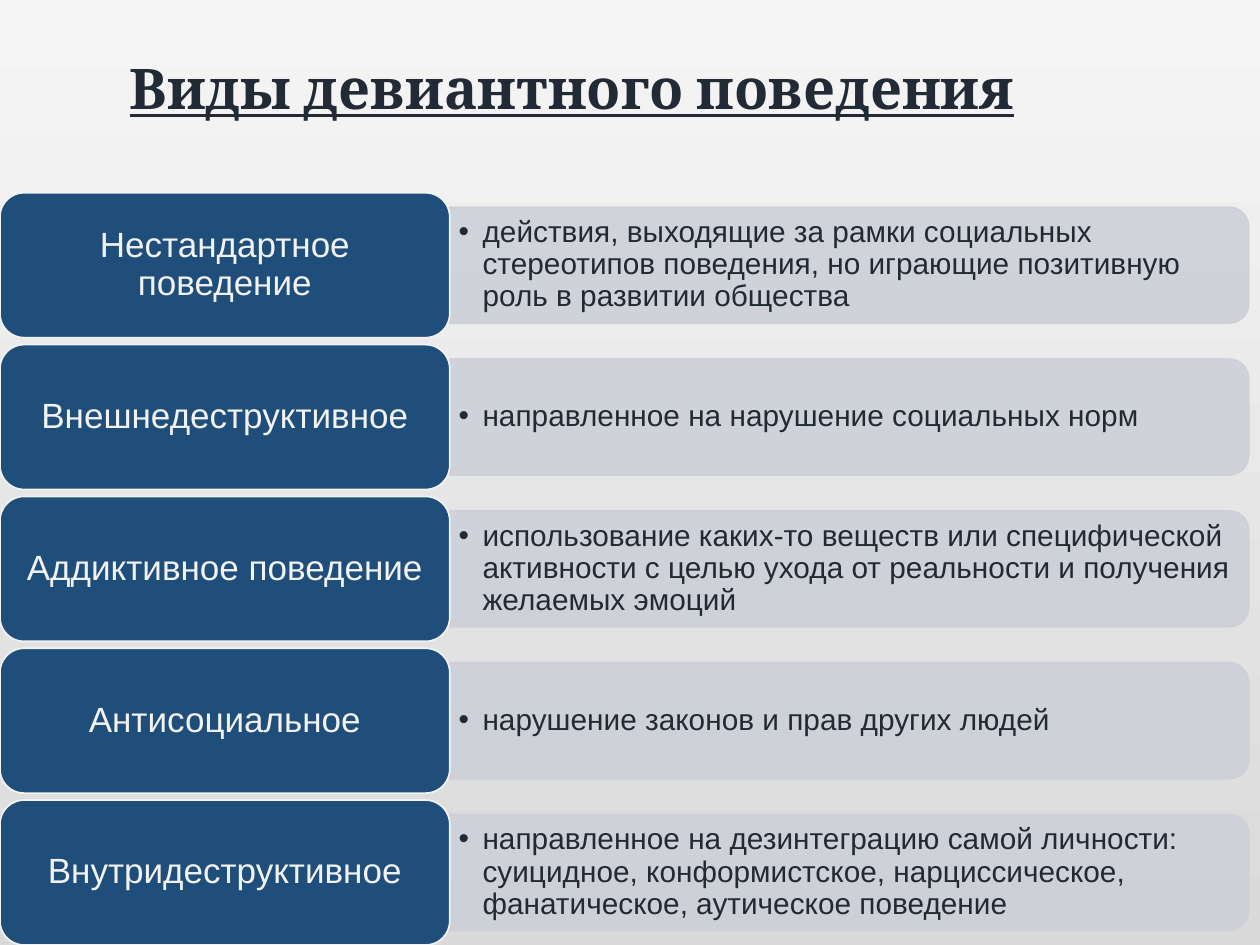
import dataclasses
import pptx
import pptx.util
import pptx.dml.color
import pptx.enum.shapes
import pptx.enum.text
import pptx.oxml
import pptx.oxml.ns

Inches = pptx.util.Inches
Pt = pptx.util.Pt
Shape = pptx.enum.shapes.MSO_SHAPE
Align = pptx.enum.text.PP_ALIGN
qn = pptx.oxml.ns.qn


@dataclasses.dataclass
class Theme:
    ink: str = "222A35"
    navy: str = "1E4E79"
    pale: str = "F2F2F2"
    band: str = "CDD0D7"
    top: str = "F5F5F5"
    base: str = "DADADA"
    head: str = "Cambria"
    body: str = "Arial"
    title: int = 32
    label: int = 20
    note: int = 17


def color(code):
    return pptx.dml.color.RGBColor.from_string(code)


def child(node, tag, **attrs):
    item = node.makeelement(qn(tag), attrs)
    node.append(item)
    return item


class Deck:
    def __init__(self, theme):
        self.theme = theme
        self.file = pptx.Presentation()
        self.file.slide_width = Inches(10)
        self.file.slide_height = Inches(7.5)
        self.slide = self.file.slides.add_slide(self.file.slide_layouts[6])

    def ground(self):
        fill = self.slide.background.fill
        fill.gradient()
        fill.gradient_angle = 270
        for stop, code in zip(fill.gradient_stops, (self.theme.top, self.theme.base)):
            stop.color.rgb = color(code)

    def shape(self, kind, box, fill, line):
        item = self.slide.shapes.add_shape(kind, *map(Inches, box))
        item.shadow.inherit = False
        item.fill.solid()
        item.fill.fore_color.rgb = color(fill)
        item.line.color.rgb = color(line)
        item.line.width = Pt(1)
        return item

    def letter(self, item, words, size, code, font, inset, align):
        frame = item.text_frame
        frame.word_wrap = True
        frame.vertical_anchor = pptx.enum.text.MSO_ANCHOR.MIDDLE
        frame.margin_left = frame.margin_right = Inches(inset[0])
        frame.margin_top = frame.margin_bottom = Inches(inset[1])
        para = frame.paragraphs[0]
        para.alignment = align
        para.line_spacing = 0.9
        run = para.add_run()
        run.text = words
        run.font.size = Pt(size)
        run.font.name = font
        run.font.color.rgb = color(code)
        return para, run

    def text(self, box, *style):
        item = self.slide.shapes.add_textbox(*map(Inches, box))
        return self.letter(item, *style)

    def title(self, words):
        look = self.theme
        para, run = self.text((0, 0.33, 9.08, 0.79), words, look.title, look.ink,
                              look.head, (0.1, 0.05), Align.CENTER)
        run.font.bold = True
        run.font.underline = True

    def band(self, mid):
        wide, high = 6.34, 0.92
        box = (6.74 - high / 2, mid - wide / 2, high, wide)
        item = self.shape(Shape.ROUND_2_SAME_RECTANGLE, box, self.theme.band, self.theme.band)
        item.rotation = 90
        for tone in item.element.spPr.iter(qn("a:srgbClr")):
            child(tone, "a:alpha", val="90000")

    def note(self, mid, words):
        look = self.theme
        high = 0.83
        para, run = self.text((3.57, mid - high / 2, 6.3, high), words, look.note, look.ink,
                              look.body, (0.07, 0.04), Align.LEFT)
        props = para._p.get_or_add_pPr()
        props.set("marL", str(Inches(0.19)))
        props.set("indent", str(-Inches(0.19)))
        child(props, "a:buFont", typeface=look.body)
        child(props, "a:buChar", char="•")

    def label(self, top, high, words):
        look = self.theme
        item = self.shape(Shape.ROUNDED_RECTANGLE, (0, top, 3.57, high), look.navy, look.pale)
        self.letter(item, words, look.label, look.pale, look.body, (0.08, 0.04), Align.CENTER)

    def row(self, top, high, name, words):
        mid = top + high / 2
        self.band(mid)
        self.note(mid, words)
        self.label(top, high, name)


ROWS = (
    ("Нестандартное поведение",
     "действия, выходящие за рамки социальных стереотипов поведения, "
     "но играющие позитивную роль в развитии общества"),
    ("Внешнедеструктивное", "направленное на нарушение социальных норм"),
    ("Аддиктивное поведение",
     "использование каких-то веществ или специфической активности "
     "с целью ухода от реальности и получения желаемых эмоций"),
    ("Антисоциальное", "нарушение законов и прав других людей"),
    ("Внутридеструктивное",
     "направленное на дезинтеграцию самой личности: суицидное, "
     "конформистское, нарциссическое, фанатическое, аутическое поведение"),
)


def main():
    deck = Deck(Theme())
    deck.ground()
    deck.title("Виды девиантного поведения")
    first, last, high = 1.53, 6.35, 1.15
    step = (last - first) / (len(ROWS) - 1)
    for place, (name, words) in enumerate(ROWS):
        deck.row(first + place * step, high, name, words)
    deck.file.save("out.pptx")


if __name__ == "__main__":
    main()
